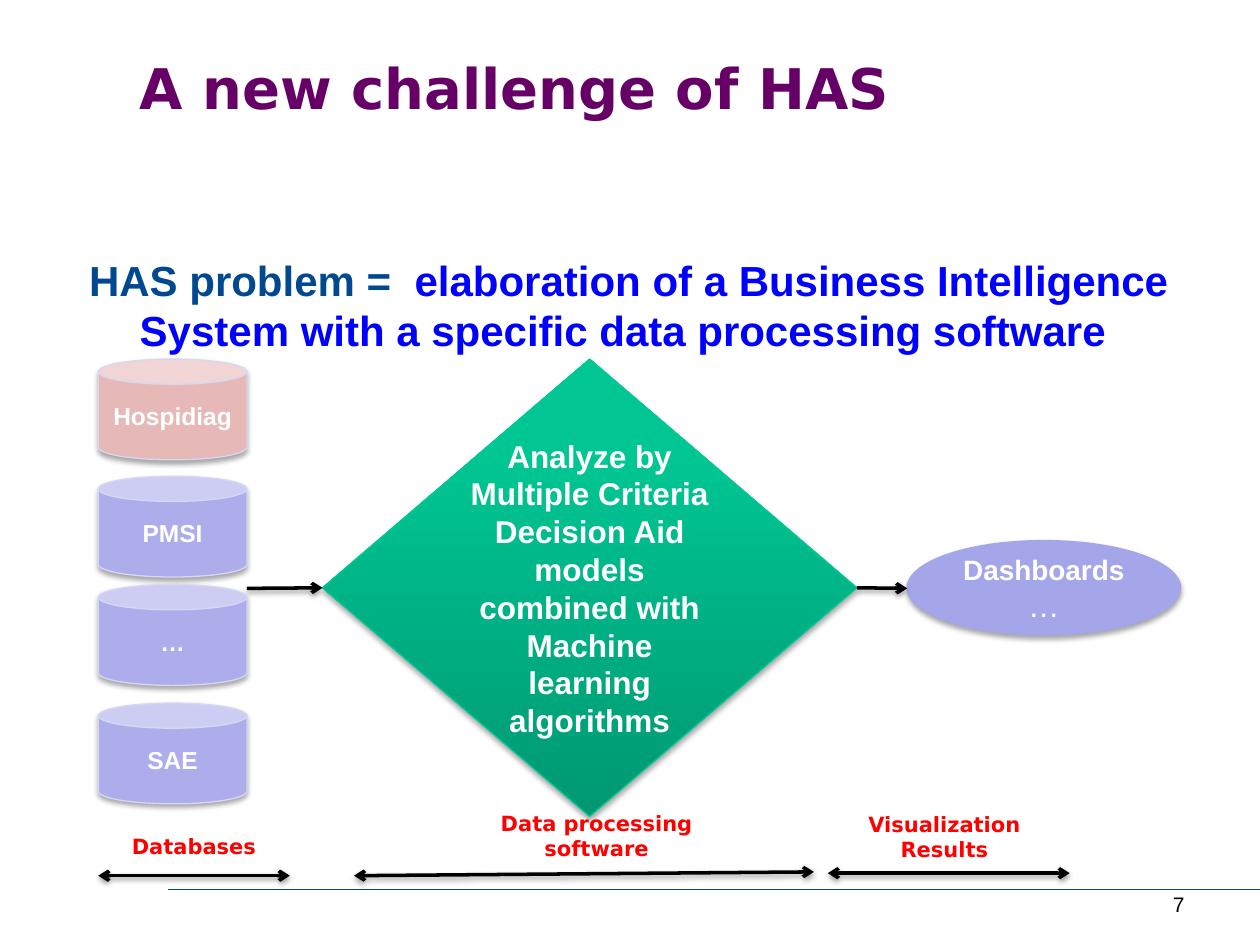
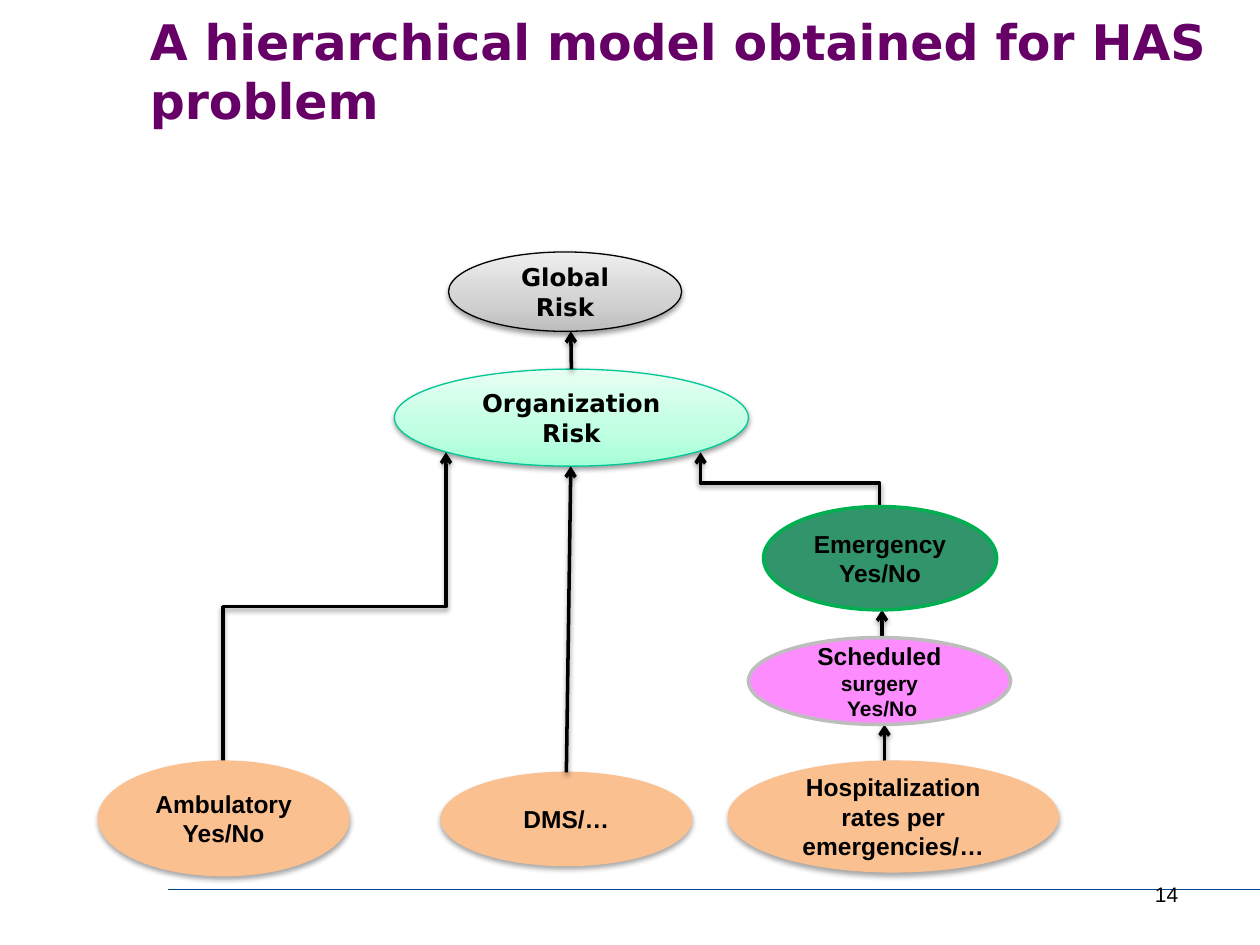
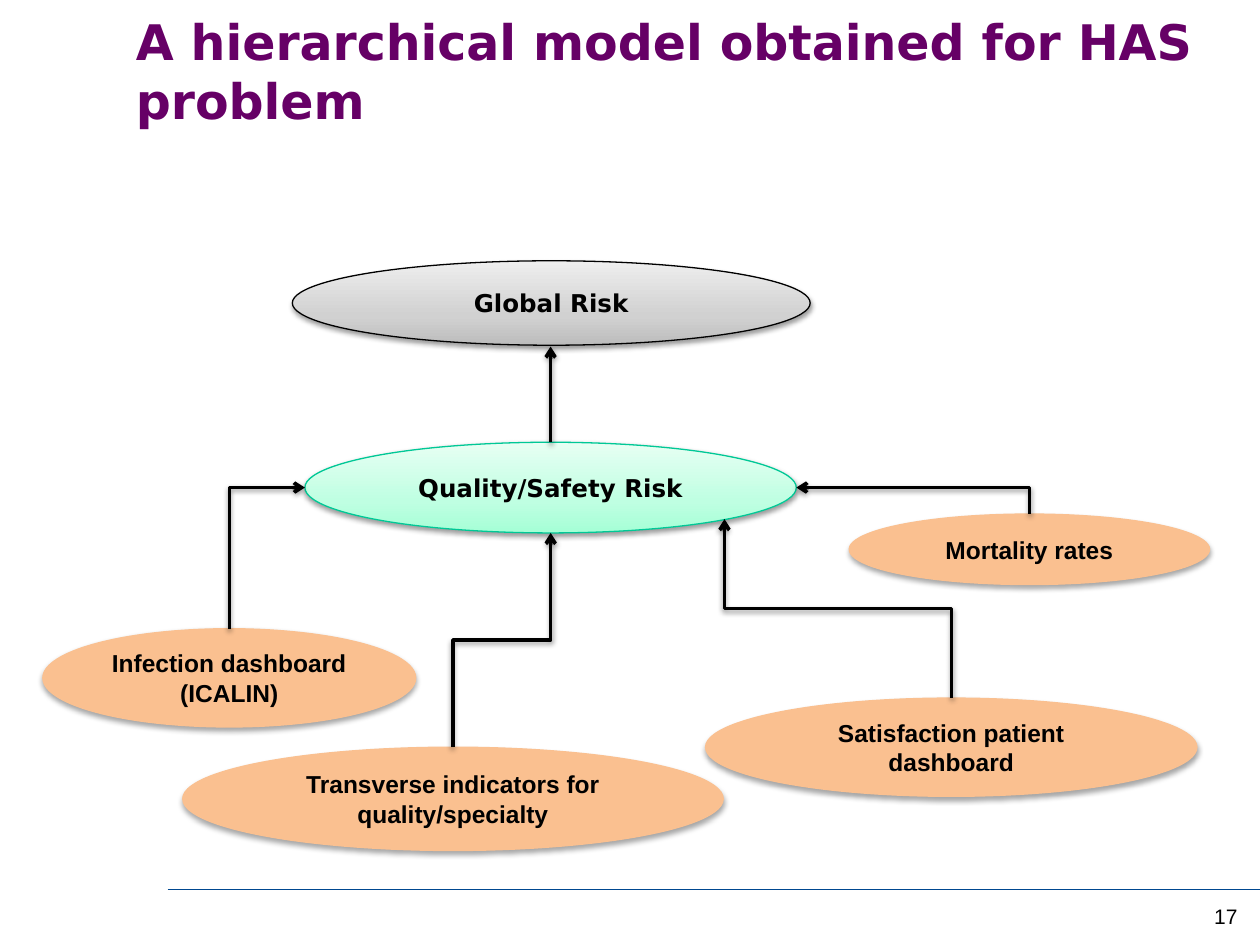
import dataclasses

import lxml.etree
import pptx
import pptx.dml.color
import pptx.enum.shapes
import pptx.enum.text
import pptx.oxml.ns
import pptx.util

COLUMNS, ROWS = 100, 75
SHAPES = pptx.enum.shapes.MSO_SHAPE
CONNECTORS = pptx.enum.shapes.MSO_CONNECTOR
ALIGN = pptx.enum.text.PP_ALIGN
ANCHOR = pptx.enum.text.MSO_ANCHOR

BLACK, WHITE, RED = "000000", "FFFFFF", "FF0000"
NAVY, BLUE, PURPLE = "004890", "0000FF", "660066"
LILAC, PALE_LILAC, LAVENDER, ROSE = "ADADEB", "D6D6F5", "A5A5E9", "E6B9B8"
PEACH, TEAL, PINK, SILVER = "FAC090", "00C896", "FD8CFF", "BDBDBD"
GREEN, BRIGHT_GREEN = "32946A", "00B050"
TEAL_GRADIENT = [(0, "009872"), (80, "00C694"), (100, "00C795")]
GREY_GRADIENT = [(0, "BDBDBD"), (35, "D1D1D1"), (100, "EEEEEE")]
MINT_GRADIENT = [(0, "A5FFD6"), (35, "BFFFE2"), (100, "E7FFF3")]

SOFT_SHADOW = (35, 1.8)
CLOSE_SHADOW = (38, 1.6)


@dataclasses.dataclass
class TextStyle:
    size: float
    color: str = BLACK
    font: str = "Arial"
    bold: bool = True


PAGE_NUMBER = TextStyle(12, bold=False)
LABEL = TextStyle(12, RED, "DejaVu Sans")
RISK = TextStyle(14, font="DejaVu Sans")
INDICATOR = TextStyle(14)
DATABASE = TextStyle(14, WHITE)


def rgb(color):
    return pptx.dml.color.RGBColor.from_string(color)


def child(parent, tag, **attributes):
    element = lxml.etree.SubElement(parent, pptx.oxml.ns.qn(tag))
    for name, value in attributes.items():
        element.set(name, str(value))
    return element


class Deck:
    def __init__(self):
        self.presentation = pptx.Presentation()
        self.presentation.slide_width = pptx.util.Inches(10)
        self.presentation.slide_height = pptx.util.Inches(7.5)
        self.slide = None

    def x(self, columns):
        return round(self.presentation.slide_width * columns / COLUMNS)

    def y(self, rows):
        return round(self.presentation.slide_height * rows / ROWS)

    def frame(self, box):
        left, top, width, height = box
        return self.x(left), self.y(top), self.x(width), self.y(height)

    def new_slide(self, title, title_box, title_size, number, number_box):
        self.slide = self.presentation.slides.add_slide(self.presentation.slide_layouts[6])
        self.line((13.3, 70.6), (100, 70.6), NAVY, 0.75)
        self.text(title_box, [title], TextStyle(title_size, PURPLE, "DejaVu Sans"),
                  ALIGN.LEFT, ANCHOR.MIDDLE)
        self.text(number_box, [number], PAGE_NUMBER, ALIGN.RIGHT)

    def add_lines(self, shape, lines, style, align, anchor):
        frame = shape.text_frame
        frame.word_wrap = True
        frame.vertical_anchor = anchor
        for index, line in enumerate(lines):
            paragraph = frame.add_paragraph() if index else frame.paragraphs[0]
            paragraph.alignment = align
            runs = [(line, style)] if isinstance(line, str) else line
            for text, run_style in runs:
                run = paragraph.add_run()
                run.text = text
                run.font.name = run_style.font
                run.font.size = pptx.util.Pt(run_style.size)
                run.font.bold = run_style.bold
                run.font.color.rgb = rgb(run_style.color)

    def text(self, box, lines, style, align=ALIGN.CENTER, anchor=ANCHOR.TOP):
        shape = self.slide.shapes.add_textbox(*self.frame(box))
        self.add_lines(shape, lines, style, align, anchor)

    def add_shadow(self, properties, shadow):
        effects = properties.find(pptx.oxml.ns.qn("a:effectLst"))
        if effects is None:
            effects = child(properties, "a:effectLst")
        if shadow:
            opacity, distance = shadow
            outer = child(effects, "a:outerShdw", blurRad=pptx.util.Pt(3.1),
                          dist=pptx.util.Pt(distance), dir=5400000, rotWithShape=0)
            color = child(outer, "a:srgbClr", val=BLACK)
            child(color, "a:alpha", val=opacity * 1000)

    def fill(self, shape, fill):
        if isinstance(fill, str):
            shape.fill.solid()
            shape.fill.fore_color.rgb = rgb(fill)
            return
        shape.fill.gradient()
        shape.fill.gradient_angle = 90
        stops = shape._element.spPr.find(".//" + pptx.oxml.ns.qn("a:gsLst"))
        for stop in list(stops):
            stops.remove(stop)
        for position, color in fill:
            child(child(stops, "a:gs", pos=position * 1000), "a:srgbClr", val=color)

    def node(self, kind, box, lines, style, fill, outline, shadow=SOFT_SHADOW, width=0.75):
        shape = self.slide.shapes.add_shape(kind, *self.frame(box))
        self.fill(shape, fill)
        shape.line.color.rgb = rgb(outline)
        shape.line.width = pptx.util.Pt(width)
        shape.shadow.inherit = False
        self.add_shadow(shape._element.spPr, shadow)
        self.add_lines(shape, lines, style, ALIGN.CENTER, ANCHOR.MIDDLE)
        return shape

    def global_risk(self, box):
        return self.node(SHAPES.OVAL, box, ["Global Risk"], RISK,
                         GREY_GRADIENT, BLACK, CLOSE_SHADOW)

    def risk(self, box, text):
        return self.node(SHAPES.OVAL, box, [text], RISK, MINT_GRADIENT, TEAL, CLOSE_SHADOW)

    def indicator(self, box, text):
        return self.node(SHAPES.OVAL, box, [text], INDICATOR, PEACH, PEACH)

    def line(self, start, end, color=BLACK, width=2.0, heads=(), shadow=None,
             kind=CONNECTORS.STRAIGHT):
        connector = self.slide.shapes.add_connector(
            kind, self.x(start[0]), self.y(start[1]), self.x(end[0]), self.y(end[1]))
        connector.line.color.rgb = rgb(color)
        connector.line.width = pptx.util.Pt(width)
        for head in heads:
            child(connector.get_or_add_ln(), head, type="arrow")
        self.add_shadow(connector._element.spPr, shadow)
        return connector

    def arrow(self, start, end, kind=CONNECTORS.STRAIGHT):
        return self.line(start, end, heads=["a:tailEnd"], shadow=CLOSE_SHADOW, kind=kind)

    def span(self, start, end):
        return self.line(start, end, heads=["a:headEnd", "a:tailEnd"], shadow=CLOSE_SHADOW)

    def rising_elbow(self, start, end, single_bend=False):
        middle_x, middle_y = (start[0] + end[0]) / 2, (start[1] + end[1]) / 2
        half_width, half_height = (start[1] - end[1]) / 2, abs(end[0] - start[0]) / 2
        side = 1 if end[0] >= start[0] else -1
        connector = self.arrow((middle_x + side * half_width, middle_y + half_height),
                               (middle_x - side * half_width, middle_y - half_height),
                               CONNECTORS.ELBOW)
        connector.rotation = 180 - 90 * side
        if single_bend:
            connector._element.spPr.find(pptx.oxml.ns.qn("a:prstGeom")).set(
                "prst", "bentConnector2")


def build_challenge(deck):
    deck.new_slide("A new challenge of HAS", (10.1, 0.7, 88.3, 12.5), 32,
                   "7", (71.7, 70.3, 23.3, 4))
    problem, answer = TextStyle(24, NAVY), TextStyle(24, BLUE)
    deck.text((1.4, 19.7, 97, 9.8), [[
        ("HAS problem =  ", problem),
        ("elaboration of a Business Intelligence System with a specific "
         "data processing software ", answer),
    ]], problem)
    analysis = deck.node(
        SHAPES.DIAMOND, (25.6, 28.5, 42.4, 36.3),
        ["Analyze by Multiple Criteria Decision Aid models combined with "
         "Machine learning algorithms"],
        TextStyle(18, WHITE), TEAL_GRADIENT, TEAL)
    deck.node(SHAPES.OVAL, (72, 42.9, 21.7, 7.5),
              ["Dashboards", [("…", TextStyle(18, WHITE, bold=False))]],
              TextStyle(16, WHITE), LAVENDER, LAVENDER)
    deck.arrow((19.6, 46.7), (25.6, 46.7)).end_connect(analysis, 1)
    deck.arrow((68, 46.7), (72, 46.7)).begin_connect(analysis, 3)
    for start, end in [((7.8, 69.5), (23, 69.5)), ((28.1, 69.5), (64.6, 69.2)),
                       ((65.7, 69.3), (84.9, 69.3))]:
        deck.span(start, end)
    for box, lines in [((4.6, 65.7, 21.6, 3), ["Databases"]),
                       ((38.1, 63.8, 18.5, 5), ["Data processing software"]),
                       ((65.7, 63.9, 18.5, 5), ["Visualization", "Results"])]:
        deck.text(box, lines, LABEL)
    for name, top, color in [("Hospidiag", 28.5, ROSE), ("PMSI", 37.8, LILAC),
                             ("…", 46.4, LILAC), ("SAE", 55.8, LILAC)]:
        deck.node(SHAPES.CAN, (7.8, top, 11.8, 8), [name], DATABASE, color, PALE_LILAC)


def build_organization_model(deck):
    deck.new_slide("A hierarchical model obtained for HAS problem",
                   (10.9, 0.7, 86.1, 9.8), 28, "14", (71.2, 69.5, 23.3, 4))
    deck.arrow((70.2, 61.9), (70.2, 57.5))
    deck.rising_elbow((69.8, 40.8), (55.6, 35.9))
    deck.arrow((70, 52.7), (70, 48.4))
    deck.global_risk((35.6, 20, 18.5, 6.3))
    organization = deck.risk((31.3, 29.3, 28.1, 7.7), "Organization Risk")
    deck.node(SHAPES.OVAL, (60.6, 40.2, 18.5, 8.2), ["Emergency", "Yes/No"],
              INDICATOR, GREEN, BRIGHT_GREEN, None, 2)
    small = TextStyle(12)
    deck.node(SHAPES.OVAL, (59.4, 50.6, 20.8, 6.9),
              [[("Scheduled", INDICATOR), (" surgery", small)], [(" Yes/No", small)]],
              INDICATOR, PINK, SILVER, None, 2)
    stay_length = deck.indicator((35, 61.3, 19.9, 7.4), "DMS/…")
    deck.rising_elbow((17.7, 60.4), (35.4, 35.9))
    deck.indicator((7.8, 60.4, 19.9, 9.1), "Ambulatory Yes/No")
    deck.indicator((57.8, 60.4, 26.2, 8.8), "Hospitalization rates per emergencies/…")
    deck.arrow((45, 61.3), (45.3, 37)).begin_connect(stay_length, 0)
    deck.arrow((45.3, 29.3), (45.3, 26.3)).begin_connect(organization, 0)


def build_quality_model(deck):
    deck.new_slide("A hierarchical model obtained for HAS problem",
                   (9.8, 0.7, 87.1, 9.8), 28, "17", (86.7, 71.2, 12.5, 5))
    deck.global_risk((23.2, 20.7, 41.1, 6.7))
    quality = deck.risk((24.2, 35.1, 39, 7.2), "Quality/Safety Risk")
    deck.arrow((43.7, 35.1), (43.7, 27.5)).begin_connect(quality, 0)
    for text, box, end, single_bend in [
        ("Infection dashboard (ICALIN)", (3.4, 49.9, 29.6, 7.8), (24.2, 38.7), True),
        ("Satisfaction patient dashboard", (56, 55.4, 39, 7.8), (57.5, 41.2), False),
        ("Transverse indicators for quality/specialty", (14.5, 59.3, 42.9, 8.2),
         (43.7, 42.3), False),
        ("Mortality rates", (67.4, 40.8, 28.6, 5.6), (63.2, 38.7), True),
    ]:
        deck.indicator(box, text)
        left, top, width, height = box
        deck.rising_elbow((left + width / 2, top), end, single_bend)


def main():
    deck = Deck()
    build_challenge(deck)
    build_organization_model(deck)
    build_quality_model(deck)
    deck.presentation.save("out.pptx")


if __name__ == "__main__":
    main()
